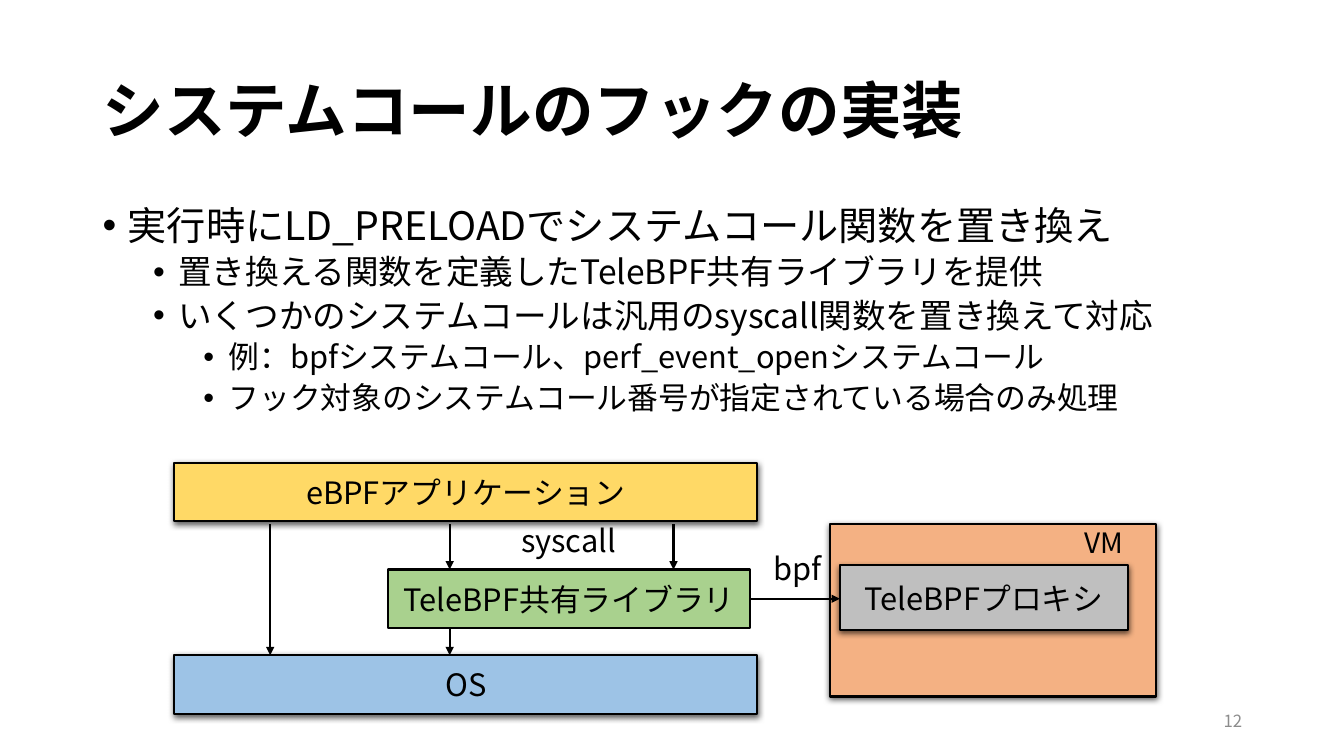
"""Builds a slide on hooking system calls with a preloaded library."""
import pptx
import pptx.util
import pptx.dml.color
import pptx.enum.shapes
import pptx.enum.text
import pptx.oxml.ns
from lxml import etree

Inches, Pt = pptx.util.Inches, pptx.util.Pt
ALIGN, ANCHOR = pptx.enum.text.PP_ALIGN, pptx.enum.text.MSO_ANCHOR
SANS, BLACK, GREY = "Noto Sans CJK JP", "000000", "8C8C8C"

TITLE = "システムコールのフックの実装"
POINTS = [
    (0, "実行時にLD_PRELOADでシステムコール関数を置き換え"),
    (1, "置き換える関数を定義したTeleBPF共有ライブラリを提供"),
    (1, "いくつかのシステムコールは汎用のsyscall関数を置き換えて対応"),
    (2, "例：bpfシステムコール、perf_event_openシステムコール"),
    (2, "フック対象のシステムコール番号が指定されている場合のみ処理"),
]
LEVELS = [(28, 10), (24, 5), (22, 5)]
APP = (1.73, 4.59, 5.78, 0.58)
LIB = (3.85, 5.65, 3.59, 0.58)
OS = (1.73, 6.5, 5.78, 0.58)
VM = (8.23, 5.2, 3.24, 1.71)
PROXY = (8.33, 5.61, 2.86, 0.64)
BOXES = [
    ("", VM, "F4B183", True),
    ("eBPFアプリケーション", APP, "FFD966", True),
    ("TeleBPFプロキシ", PROXY, "BFBFBF", True),
    ("OS", OS, "9DC3E6", True),
    ("TeleBPF共有ライブラリ", LIB, "A9D18E", False),
]
LABELS = [
    ("syscall", (5.07, 5.13, 2.01, 0.47), 22),
    ("bpf", (7.57, 5.4, 0.92, 0.47), 22),
    ("VM", (10.66, 5.16, 0.75, 0.44), 20),
]
GAP = 0.03
DOWN = [(2.68, APP, OS), (4.46, APP, LIB), (6.68, APP, LIB), (4.46, LIB, OS)]


def color(code):
    return pptx.dml.color.RGBColor.from_string(code)


def add(node, tag, **attrs):
    return etree.SubElement(node, pptx.oxml.ns.qn("a:" + tag), attrs)


def style(para, size, code=BLACK, face=SANS, bold=False):
    for run in para.runs:
        font = run.font
        font.size, font.bold, font.name = Pt(size), bold, face
        font.color.rgb = color(code)
        add(run._r.get_or_add_rPr(), "ea", typeface=SANS)


def text(slide, words, place, size, align=ALIGN.LEFT, anchor=ANCHOR.TOP, **look):
    frame = slide.shapes.add_textbox(*map(Inches, place)).text_frame
    frame.word_wrap, frame.vertical_anchor = True, anchor
    frame.text = words
    para = frame.paragraphs[0]
    para.alignment = align
    style(para, size, **look)
    return frame


def bullets(slide, place):
    frame = slide.shapes.add_textbox(*map(Inches, place)).text_frame
    frame.word_wrap = True
    for i, (level, words) in enumerate(POINTS):
        para = frame.add_paragraph() if i else frame.paragraphs[0]
        size, before = LEVELS[level]
        para.text, para.level = words, level
        para.line_spacing, para.space_before = 0.9, Pt(before)
        style(para, size)
        props = para._p.get_or_add_pPr()
        props.set("marL", str(Inches(0.25 + 0.5 * level)))
        props.set("indent", str(Inches(-0.25)))
        add(props, "buFont", typeface="Arial")
        add(props, "buChar", char="•")


def box(slide, words, place, fill, shade):
    kind = pptx.enum.shapes.MSO_SHAPE.RECTANGLE
    shape = slide.shapes.add_shape(kind, *map(Inches, place))
    shape.fill.solid()
    shape.fill.fore_color.rgb = color(fill)
    shape.line.color.rgb, shape.line.width = color(BLACK), Pt(1.5)
    shape.shadow.inherit = False
    if shade:
        effects = shape._element.spPr.find(pptx.oxml.ns.qn("a:effectLst"))
        cast = add(effects, "outerShdw", blurRad=str(Pt(4.5)), dist=str(Pt(1.5)),
                   dir="5400000", algn="ctr", rotWithShape="0")
        add(add(cast, "srgbClr", val=BLACK), "alpha", val="63000")
    if words:
        frame = shape.text_frame
        frame.text, frame.vertical_anchor = words, ANCHOR.MIDDLE
        frame.paragraphs[0].alignment = ALIGN.CENTER
        style(frame.paragraphs[0], 22)


def arrow(slide, *ends):
    kind = pptx.enum.shapes.MSO_CONNECTOR.STRAIGHT
    link = slide.shapes.add_connector(kind, *map(Inches, ends))
    link.line.color.rgb, link.line.width = color(BLACK), Pt(1.5)
    add(link.line._get_or_add_ln(), "tailEnd", type="triangle")
    add(link._element.spPr, "effectLst")


def main():
    deck = pptx.Presentation()
    deck.slide_width, deck.slide_height = Inches(13.33), Inches(7.5)
    slide = deck.slides.add_slide(deck.slide_layouts[6])
    head = text(slide, TITLE, (0.92, 0.4, 11.5, 1.45), 44, anchor=ANCHOR.MIDDLE,
                face="Arial", bold=True)
    head.paragraphs[0].line_spacing = 0.9
    bullets(slide, (0.92, 2, 11.5, 4.76))
    text(slide, "12", (9.42, 6.95, 3, 0.4), 12, ALIGN.RIGHT, ANCHOR.MIDDLE, code=GREY)
    for item in BOXES:
        box(slide, *item)
    for x, top, low in DOWN:
        gap = GAP if top is APP else 0
        arrow(slide, x, top[1] + top[3] + gap, x, low[1])
    mid = LIB[1] + LIB[3] / 2
    arrow(slide, LIB[0] + LIB[2], mid, PROXY[0], mid)
    for item in LABELS:
        text(slide, *item)
    deck.save("out.pptx")


if __name__ == "__main__":
    main()
